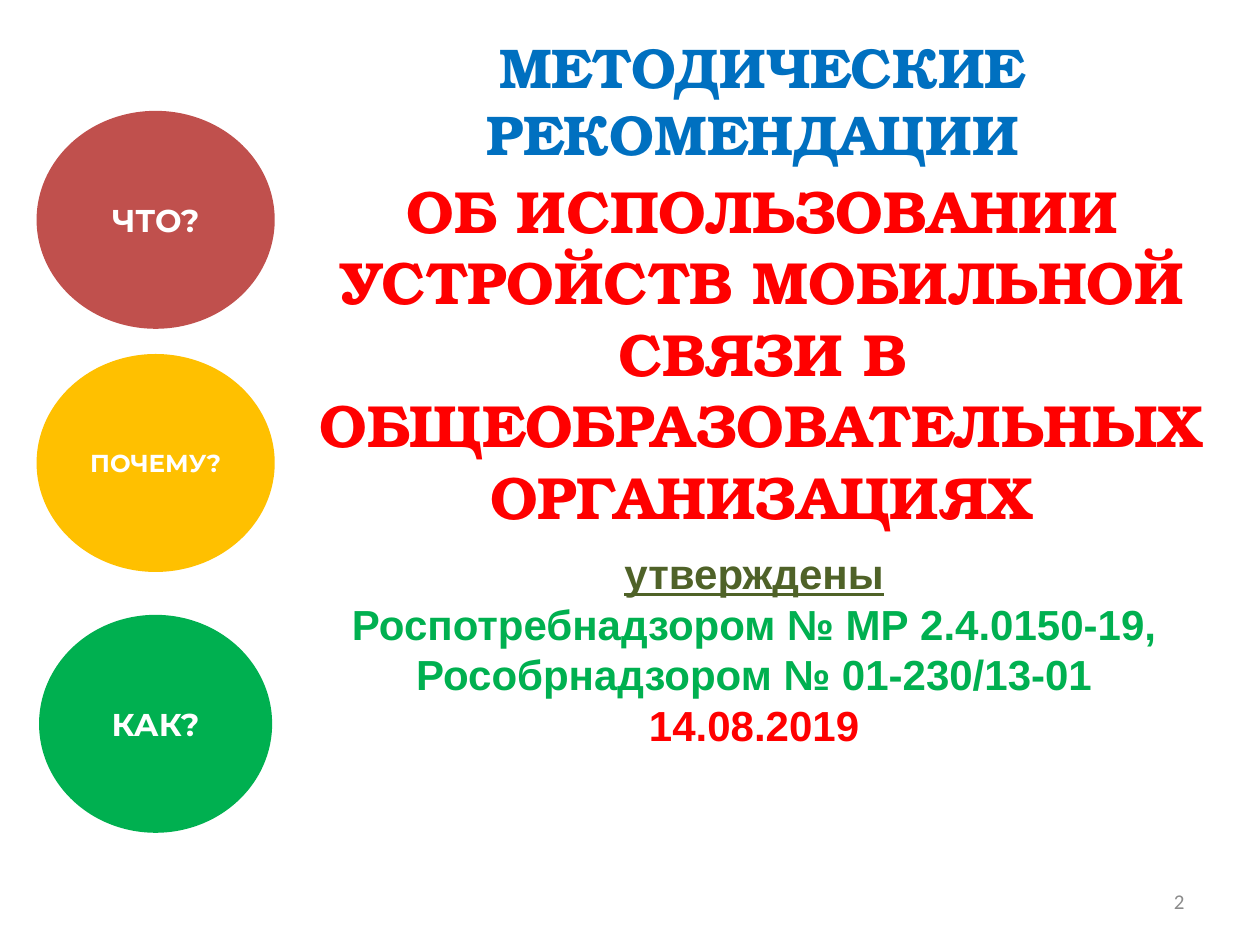
from dataclasses import dataclass

import pptx
import pptx.dml.color
import pptx.enum.shapes
import pptx.enum.text
import pptx.util

Inches = pptx.util.Inches
Align = pptx.enum.text.PP_ALIGN
Anchor = pptx.enum.text.MSO_ANCHOR


@dataclass(frozen=True)
class Theme:
    title_font: str = "TeX Gyre Bonum"
    body_font: str = "Arial"
    circle_font: str = "Montserrat"
    number_font: str = "Calibri"
    blue: str = "0070C0"
    red: str = "FF0000"
    olive: str = "4F6228"
    green: str = "00B050"
    brick: str = "C0504D"
    amber: str = "FFC000"
    white: str = "FFFFFF"
    gray: str = "8B8B8B"
    heading_size: int = 32
    subject_size: int = 34
    body_size: int = 24
    large_size: int = 18
    small_size: int = 14
    number_size: int = 12


@dataclass(frozen=True)
class Question:
    text: str
    fill: str
    top: float
    width: float
    size: int


THEME = Theme()
CIRCLE_CENTER = 1.235
CIRCLE_HEIGHT = 1.73
QUESTIONS = [
    Question("ЧТО?", THEME.brick, 0.88, 1.89, THEME.large_size),
    Question("ПОЧЕМУ?", THEME.amber, 2.81, 1.89, THEME.small_size),
    Question("КАК?", THEME.green, 4.88, 1.85, THEME.large_size),
]


def rgb(color: str):
    return pptx.dml.color.RGBColor.from_string(color)


def add_run(p, text: str, *, font: str, size: int, color: str,
            bold: bool = True, underline: bool = False) -> None:
    r = p.add_run()
    r.text = text
    r.font.name = font
    r.font.size = pptx.util.Pt(size)
    r.font.color.rgb = rgb(color)
    r.font.bold = bold
    r.font.underline = underline


def add_text_frame(s, left: float, top: float, width: float, height: float,
                   anchor=Anchor.TOP):
    box = s.shapes.add_textbox(Inches(left), Inches(top), Inches(width), Inches(height))
    tf = box.text_frame
    tf.word_wrap = True
    tf.vertical_anchor = anchor
    return tf


def add_title(s) -> None:
    tf = add_text_frame(s, 2.09, 0.21, 7.8, 4.02)
    lines = [
        ("МЕТОДИЧЕСКИЕ РЕКОМЕНДАЦИИ ", THEME.heading_size, THEME.blue),
        ("ОБ ИСПОЛЬЗОВАНИИ УСТРОЙСТВ МОБИЛЬНОЙ СВЯЗИ В "
         "ОБЩЕОБРАЗОВАТЕЛЬНЫХ ОРГАНИЗАЦИЯХ", THEME.subject_size, THEME.red),
    ]
    for i, (text, size, color) in enumerate(lines):
        p = tf.add_paragraph() if i else tf.paragraphs[0]
        p.alignment = Align.CENTER
        p.space_before = pptx.util.Pt(4)
        p._p.get_or_add_pPr().set("marL", str(Inches(0.12)))
        add_run(p, text, font=THEME.title_font, size=size, color=color)


def add_approval(s) -> None:
    tf = add_text_frame(s, 2.6, 4.3, 6.77, 1.7)
    style = dict(font=THEME.body_font, size=THEME.body_size)
    p = tf.paragraphs[0]
    p.alignment = Align.CENTER
    add_run(p, "утверждены", color=THEME.olive, underline=True, **style)
    p = tf.add_paragraph()
    p.alignment = Align.CENTER
    add_run(p, "Роспотребнадзором № МР 2.4.0150-19, Рособрнадзором № 01-230/13-01 ",
            color=THEME.green, **style)
    add_run(p, "14.08.2019", color=THEME.red, **style)


def add_slide_number(s) -> None:
    p = add_text_frame(s, 7.17, 6.95, 2.33, 0.4, Anchor.MIDDLE).paragraphs[0]
    p.alignment = Align.RIGHT
    add_run(p, "2", font=THEME.number_font, size=THEME.number_size,
            color=THEME.gray, bold=False)


def add_question(s, question: Question) -> None:
    sp = s.shapes.add_shape(
        pptx.enum.shapes.MSO_SHAPE.OVAL,
        Inches(CIRCLE_CENTER - question.width / 2), Inches(question.top),
        Inches(question.width), Inches(CIRCLE_HEIGHT))
    sp.shadow.inherit = False
    sp.fill.solid()
    sp.fill.fore_color.rgb = rgb(question.fill)
    sp.line.fill.background()
    tf = sp.text_frame
    tf.word_wrap = True
    tf.vertical_anchor = Anchor.MIDDLE
    p = tf.paragraphs[0]
    p.alignment = Align.CENTER
    add_run(p, question.text, font=THEME.circle_font, size=question.size,
            color=THEME.white)


def main() -> None:
    prs = pptx.Presentation()
    prs.slide_width, prs.slide_height = Inches(10), Inches(7.5)
    s = prs.slides.add_slide(prs.slide_layouts[6])

    # Text on the right and the page number
    add_title(s)
    add_approval(s)
    add_slide_number(s)

    # Column of questions on the left
    for question in QUESTIONS:
        add_question(s, question)

    prs.save("out.pptx")


if __name__ == "__main__":
    main()
